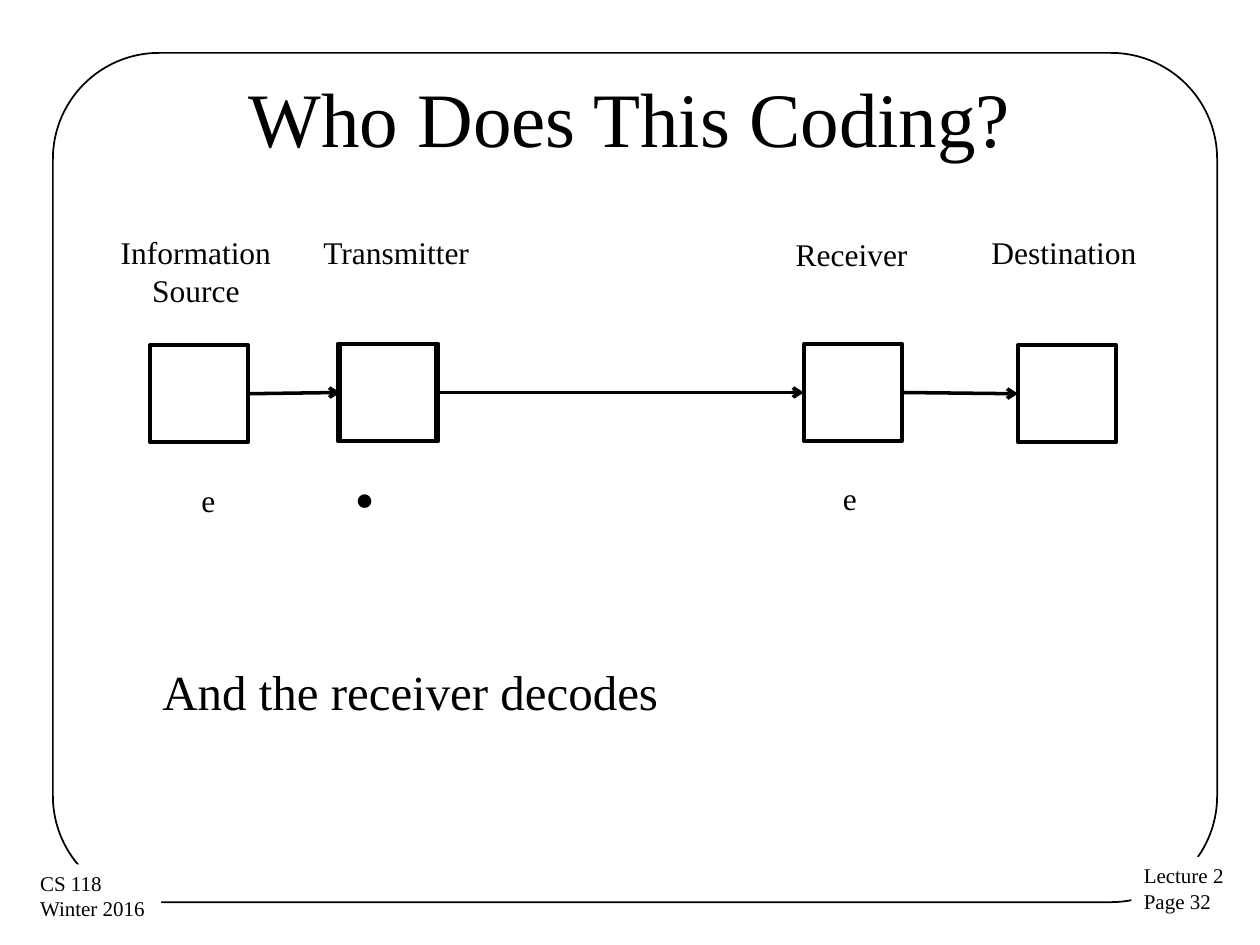
import pptx
import pptx.dml.color
import pptx.enum.shapes
import pptx.enum.text
import pptx.oxml
import pptx.oxml.ns
import pptx.util

ALIGN = pptx.enum.text.PP_ALIGN
SHAPE = pptx.enum.shapes.MSO_SHAPE
COLS, ROWS = 100, 75


def color(value):
    return pptx.dml.color.RGBColor.from_string(value)


class Deck:
    """Holds the style and the current slide, measured on a 100 by 75 grid."""

    ink, paper, font = "000000", "FFFFFF", "Times New Roman"

    def __init__(self):
        self.prs = pptx.Presentation()
        self.prs.slide_width = pptx.util.Inches(10)
        self.prs.slide_height = pptx.util.Inches(7.5)
        self.slide = self.prs.slides.add_slide(self.prs.slide_layouts[5])

    def place(self, col, row, cols, rows):
        dx, dy = self.prs.slide_width / COLS, self.prs.slide_height / ROWS
        return [round(v) for v in (col * dx, row * dy, cols * dx, rows * dy)]

    def set_text(self, sp, lines, size, align=ALIGN.LEFT, font=None, **frame):
        tf = sp.text_frame
        for name, value in frame.items():
            setattr(tf, name, value)
        tf.text = "\n".join(lines)
        style = {"size": pptx.util.Pt(size), "name": font or self.font}
        for p in tf.paragraphs:
            p.alignment = align
            for r in p.runs:
                for name, value in style.items():
                    setattr(r.font, name, value)
                r.font.color.rgb = color(self.ink)

    def title(self, text, at):
        sp = self.slide.shapes.title
        box = zip(("left", "top", "width", "height"), self.place(*at))
        for name, value in box:
            setattr(sp, name, value)
        self.set_text(sp, [text], 44, ALIGN.CENTER,
                      vertical_anchor=pptx.enum.text.MSO_ANCHOR.MIDDLE)

    def text(self, lines, at, size=18, align=ALIGN.LEFT, font=None, fill=None):
        sp = self.slide.shapes.add_textbox(*self.place(*at))
        if fill:
            sp.fill.solid()
            sp.fill.fore_color.rgb = color(fill)
        self.set_text(sp, lines, size, align, font, word_wrap=False,
                      auto_size=pptx.enum.text.MSO_AUTO_SIZE.SHAPE_TO_FIT_TEXT)

    def box(self, at, width=2.25, kind=SHAPE.RECTANGLE, fill=None):
        sp = self.slide.shapes.add_shape(kind, *self.place(*at))
        sp.shadow.inherit = False
        if fill:
            sp.fill.solid()
            sp.fill.fore_color.rgb = color(fill)
        else:
            sp.fill.background()
        sp.line.color.rgb = color(self.ink)
        sp.line.width = pptx.util.Pt(width)
        return sp

    def arrow(self, start, end):
        sp = self.slide.shapes.add_connector(
            pptx.enum.shapes.MSO_CONNECTOR.STRAIGHT, 0, 0, 0, 0)
        sp.begin_connect(start, 3)
        sp.end_connect(end, 1)
        sp.line.color.rgb = color(self.ink)
        sp.line.width = pptx.util.Pt(2)
        ns = pptx.oxml.ns.nsdecls("a")
        spPr = sp._element.spPr
        ln = spPr.find(pptx.oxml.ns.qn("a:ln"))
        ln.append(pptx.oxml.parse_xml(f'<a:tailEnd {ns} type="arrow"/>'))
        spPr.append(pptx.oxml.parse_xml(f"<a:effectLst {ns}/>"))


def main():
    deck = Deck()
    frame = deck.box((4.2, 4.2, 92.4, 67.4), 1, SHAPE.ROUNDED_RECTANGLE)
    frame.adjustments[0] = 0.125
    deck.text(["Lecture 2", "Page 32"], (89.8, 68, 8.4, 5.1), 12, fill=deck.paper)
    deck.text(["CS 118", "Winter 2016"], (2.2, 68.6, 10.6, 5.1), 12, fill=deck.paper)
    deck.title("Who Does This Coding?", (5, 3, 90, 12.5))

    stages = [
        (["Information ", "Source"], (8.5, 18, 14.1, 7.1), 11.9, 27.4, None),
        (["Transmitter"], (24.6, 18, 13.7, 4), 27, 27.3, deck.paper),
        (["Receiver"], (62.1, 18.2, 11, 4), 63.8, 27.3, None),
        (["Destination"], (77.6, 18, 13.7, 4), 80.8, 27.4, None),
    ]
    boxes = []
    for lines, at, col, row, fill in stages:
        deck.text(lines, at, align=ALIGN.CENTER)
        boxes.append(deck.box((col, row, 7.8, 7.7), fill=fill))
    for start, end in zip(boxes, boxes[1:]):
        deck.arrow(start, end)
    deck.box((26.8, 27.3, 7.8, 7.7))

    deck.text(["e"], (15, 37.7, 3.1, 4))
    deck.text(["●"], (27.2, 37.5, 3.5, 4), font="Arial")
    deck.text(["e"], (65.9, 37.5, 3.1, 4))
    deck.text(["And the receiver decodes"], (11.9, 52, 41.8, 5.7), 28)
    deck.prs.save("out.pptx")


if __name__ == "__main__":
    main()
